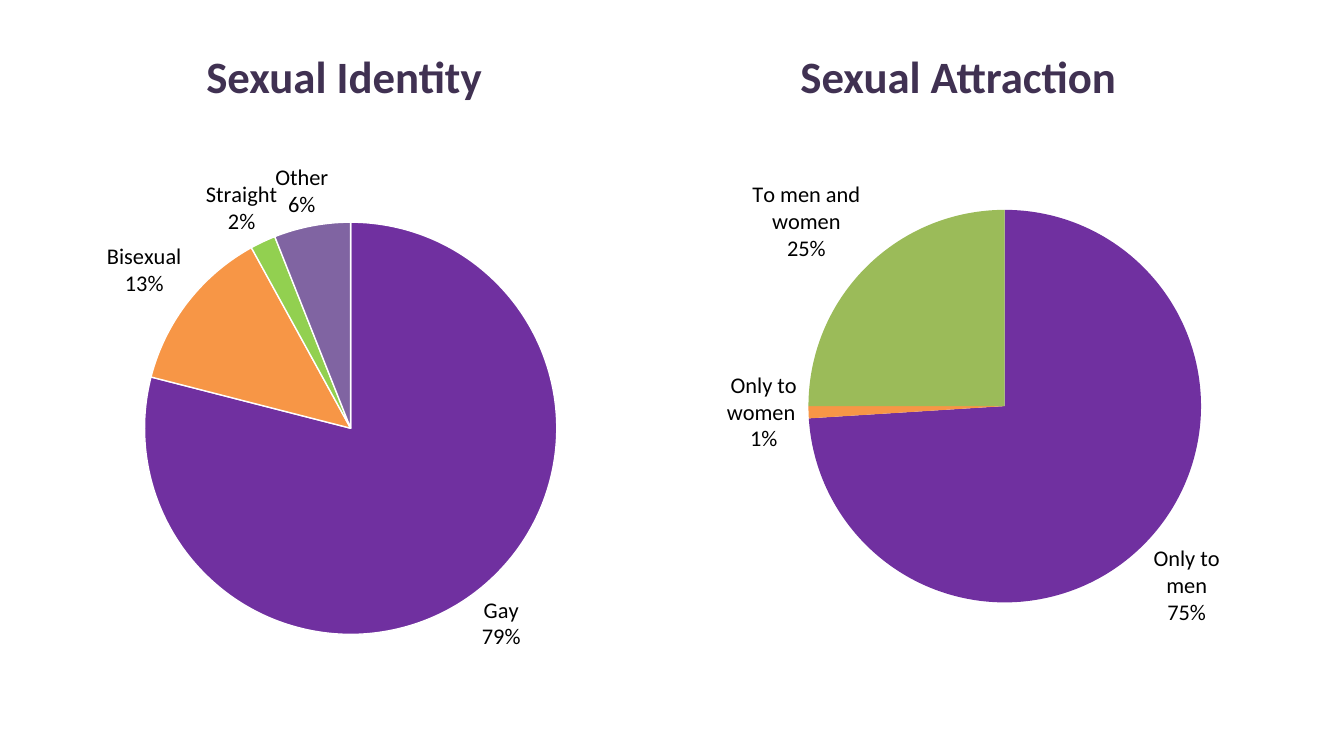
from lxml.etree import SubElement
from pptx import Presentation
from pptx.chart.data import CategoryChartData
from pptx.dml.color import RGBColor
from pptx.enum.chart import XL_CHART_TYPE, XL_LABEL_POSITION
from pptx.enum.text import MSO_ANCHOR, PP_ALIGN
from pptx.oxml.ns import qn
from pptx.util import Inches, Pt

BLACK = RGBColor(0x00, 0x00, 0x00)
WHITE = RGBColor(0xFF, 0xFF, 0xFF)
PLUM = RGBColor(0x40, 0x31, 0x52)
PURPLE = RGBColor(0x70, 0x30, 0xA0)
ORANGE = RGBColor(0xF7, 0x96, 0x46)
LIME = RGBColor(0x92, 0xD0, 0x50)
VIOLET = RGBColor(0x80, 0x64, 0xA2)
OLIVE = RGBColor(0x9B, 0xBB, 0x59)

HEADING_FORMAT = {"name": "Calibri", "size": Pt(24), "bold": True}
LABEL_FORMAT = {"name": "Calibri", "size": Pt(12), "bold": False}
LABEL_CONTENT = {
    "show_percentage": True,
    "show_category_name": True,
    "show_value": False,
    "number_format": "0%",
    "number_format_is_linked": False,
    "position": XL_LABEL_POSITION.OUTSIDE_END,
}
POINT_CONTENT = {"showVal": "0", "showCatName": "1", "showPercent": "1"}


def apply_font(font, values, color):
    for name, value in values.items():
        setattr(font, name, value)
    font.color.rgb = color


def add_layout(parent, position, settings):
    for old_layout in parent.findall(qn("c:layout")):
        parent.remove(old_layout)
    layout = SubElement(parent, qn("c:layout"))
    parent.insert(position, layout)
    manual = SubElement(layout, qn("c:manualLayout"))
    for tag, value in settings.items():
        SubElement(manual, qn(f"c:{tag}")).set("val", str(value))


presentation = Presentation()
presentation.slide_width = Inches(10)
presentation.slide_height = presentation.slide_width * 9 // 16
width, height = presentation.slide_width, presentation.slide_height
slide = presentation.slides.add_slide(presentation.slide_layouts[4])

panels = [
    {
        "heading": "Sexual Identity",
        "placeholder": 1,
        "frame": (0.028, 0.192, 0.442, 0.703),
        "plot": (0.18, 0.145, 0.694, 0.776),
        "slices": [("Gay", 79, PURPLE), ("Bisexual", 13, ORANGE),
                   ("Straight", 2, LIME), ("Other", 6, VIOLET)],
        "outline": WHITE,
        "custom_labels": {2: "Straight\n2%", 3: None},
        "label_offset": 0.03,
    },
    {
        "heading": "Sexual Attraction",
        "placeholder": 3,
        "frame": (0.484, 0.164, 0.472, 0.73),
        "plot": (0.249, 0.155, 0.619, 0.713),
        "slices": [("Only to men", 74, PURPLE), ("Only to women ", 1, ORANGE),
                   ("To men and women", 25, OLIVE)],
        "outline": None,
        "custom_labels": {0: "Only to\nmen\n75%"},
        "label_offset": 0,
    },
]

for column, panel in enumerate(panels):
    heading = slide.placeholders[panel["placeholder"]]
    heading.left = int(width * (0.035 + 0.457 * column))
    heading.top = int(height * 0.053)
    heading.width, heading.height = int(width * 0.442), int(height * 0.092)
    heading.text_frame.text = panel["heading"]
    heading.text_frame.vertical_anchor = MSO_ANCHOR.BOTTOM
    paragraph = heading.text_frame.paragraphs[0]
    paragraph.alignment = PP_ALIGN.CENTER
    apply_font(paragraph.runs[0].font, HEADING_FORMAT, PLUM)

    names, values, colors = zip(*panel["slices"])
    data = CategoryChartData()
    data.categories = names
    data.add_series("Series 1", values)
    left, top, chart_width, chart_height = panel["frame"]
    chart = slide.shapes.add_chart(
        XL_CHART_TYPE.PIE, int(width * left), int(height * top),
        int(width * chart_width), int(height * chart_height), data).chart
    chart.has_title = False
    chart.has_legend = False
    apply_font(chart.font, {"name": "Calibri", "size": Pt(10)}, BLACK)
    plot_layout = {"layoutTarget": "inner", "xMode": "edge", "yMode": "edge"}
    plot_layout.update(zip("xywh", panel["plot"]))
    add_layout(chart._chartSpace.chart.plotArea, 0, plot_layout)

    plot = chart.plots[0]
    plot.vary_by_categories = True
    series = plot.series[0]
    for index, color in enumerate(colors):
        slice_format = series.points[index].format
        slice_format.fill.solid()
        slice_format.fill.fore_color.rgb = color
        if panel["outline"] is None:
            slice_format.line.fill.background()
        else:
            slice_format.line.color.rgb = panel["outline"]
            slice_format.line.width = Pt(0.75)

    labels = series.data_labels
    for name, value in LABEL_CONTENT.items():
        setattr(labels, name, value)
    apply_font(labels.font, LABEL_FORMAT, BLACK)
    for index, text in panel["custom_labels"].items():
        label = series.points[index].data_label
        label.position = XL_LABEL_POSITION.OUTSIDE_END
        if text is None:
            apply_font(label.font, LABEL_FORMAT, BLACK)
        else:
            label.text_frame.text = text
            for paragraph in label.text_frame.paragraphs:
                apply_font(paragraph.runs[0].font, LABEL_FORMAT, BLACK)

    for point_label in labels._element.findall(qn("c:dLbl")):
        for tag, value in POINT_CONTENT.items():
            point_label.find(qn(f"c:{tag}")).set("val", value)
        if panel["label_offset"]:
            add_layout(point_label, 1, {"x": panel["label_offset"], "y": 0})

for placeholder in list(slide.placeholders):
    if not placeholder.has_text_frame or not placeholder.text_frame.text:
        placeholder.element.getparent().remove(placeholder.element)

presentation.save("out.pptx")
